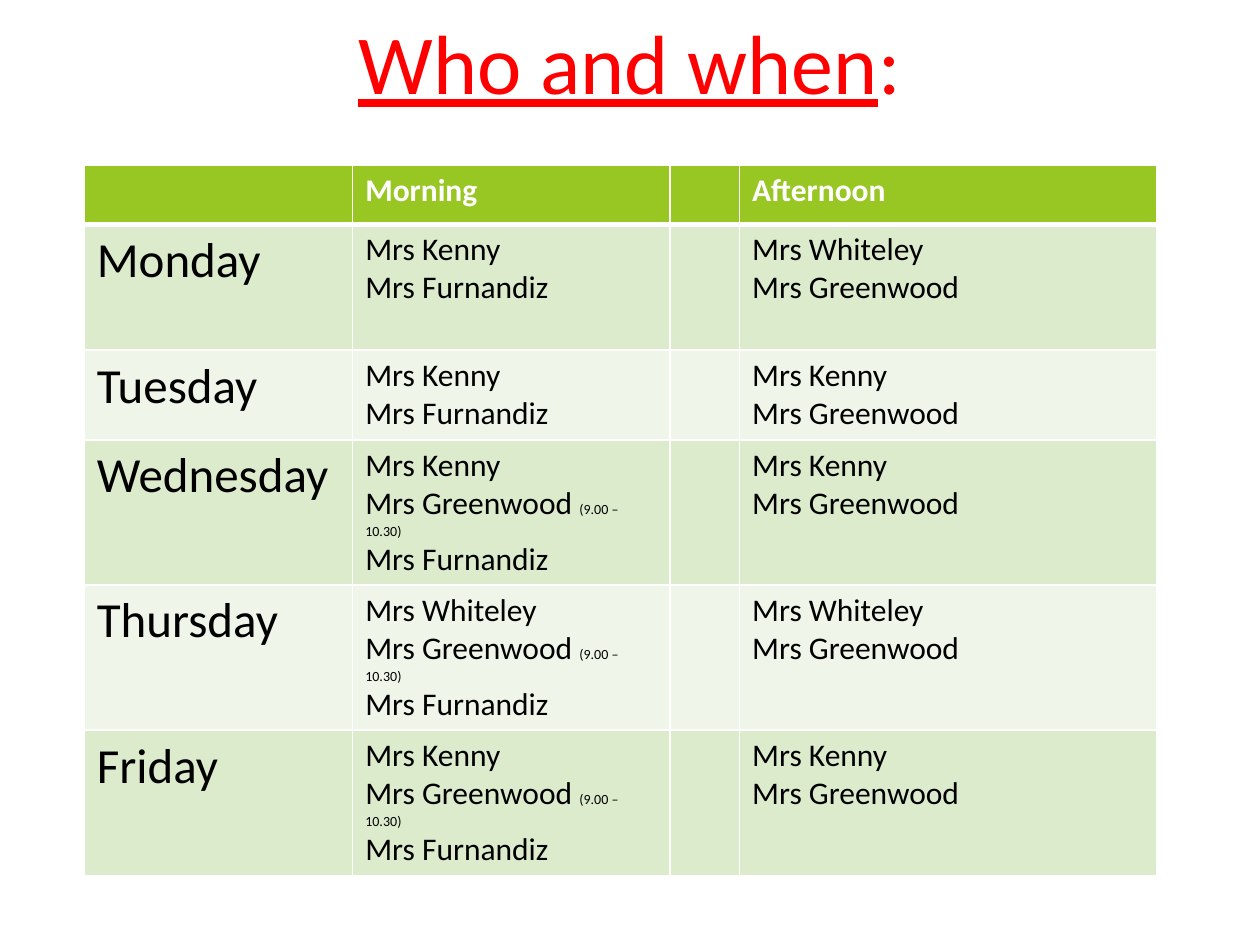
from lxml import etree
from pptx import Presentation
from pptx.dml.color import RGBColor
from pptx.enum import text
from pptx.oxml import ns
from pptx.util import Cm, Pt

WIDTHS = [5.41, 6.4, 1.4, 8.4]
HEIGHTS = [1.19, 2.54, 1.77, 2.88, 2.88, 2.88]
HELP = "Mrs Greenwood"
LATE = "Mrs Greenwood (9.00 – 10.30)"
LAST = "Mrs Furnandiz"
ROWS = [
    ("", ["Morning"], ["Afternoon"]),
    ("Monday", ["Mrs Kenny", LAST], ["Mrs Whiteley", HELP]),
    ("Tuesday", ["Mrs Kenny", LAST], ["Mrs Kenny", HELP]),
    ("Wednesday", ["Mrs Kenny", LATE, LAST], ["Mrs Kenny", HELP]),
    ("Thursday", ["Mrs Whiteley", LATE, LAST], ["Mrs Whiteley", HELP]),
    ("Friday", ["Mrs Kenny", LATE, LAST], ["Mrs Kenny", HELP]),
]


def rgb(code):
    return RGBColor.from_string(code)


def add_run(para, words, size, color, **style):
    run = para.add_run()
    run.text = words
    look = {"name": "Calibri", "size": Pt(size), **style}
    for key, value in look.items():
        setattr(run.font, key, value)
    run.font.color.rgb = rgb(color)


def add_title(slide):
    title = slide.shapes.title
    place = {"left": 0.89, "top": 0.08, "width": 23.6, "height": 2.31}
    for key, value in place.items():
        setattr(title, key, Cm(value))
    frame = title.text_frame
    look = {"word_wrap": True, "auto_size": text.MSO_AUTO_SIZE.NONE,
            "vertical_anchor": text.MSO_ANCHOR.TOP}
    for key, value in look.items():
        setattr(frame, key, value)
    para = frame.paragraphs[0]
    para.alignment = text.PP_ALIGN.CENTER
    add_run(para, "Who and when", 48, "FF0000", underline=True)
    add_run(para, ":", 48, "FF0000", underline=False)


def add_edges(cell, row):
    props = cell._tc.get_or_add_tcPr()
    wide = {"lnT": row == 1, "lnB": row == 0}
    for side in ("lnL", "lnR", "lnT", "lnB"):
        width = Pt(3 if wide.get(side) else 1)
        line = etree.SubElement(props, ns.qn(f"a:{side}"), w=str(width))
        fill = etree.SubElement(line, ns.qn("a:solidFill"))
        etree.SubElement(fill, ns.qn("a:srgbClr"), val="FFFFFF")


def fill_cell(cell, lines, row, size):
    add_edges(cell, row)
    shade = "98C723" if row == 0 else ("EFF5E8", "DDEBCD")[row % 2]
    cell.fill.solid()
    cell.fill.fore_color.rgb = rgb(shade)
    color = "000000" if row else "FFFFFF"
    frame = cell.text_frame
    for n, line in enumerate(lines):
        para = frame.add_paragraph() if n else frame.paragraphs[0]
        name, mark, hours = line.partition("(")
        add_run(para, name, size, color, bold=row == 0)
        if mark:
            add_run(para, mark + hours, 8, color, bold=False)


def add_rota(slide):
    frame = slide.shapes.add_table(
        len(ROWS), len(WIDTHS), Cm(1.7), Cm(3.33),
        Cm(sum(WIDTHS)), Cm(sum(HEIGHTS)))
    table = frame.table
    for col, width in zip(table.columns, WIDTHS):
        col.width = Cm(width)
    for row, height in zip(table.rows, HEIGHTS):
        row.height = Cm(height)
    for r, (day, early, late) in enumerate(ROWS):
        for c, lines in enumerate(([day] if day else [], early, [], late)):
            fill_cell(table.cell(r, c), lines, r, 18 if c else 28)


def main():
    deck = Presentation()
    deck.slide_width, deck.slide_height = Cm(25.4), Cm(19.05)
    slide = deck.slides.add_slide(deck.slide_layouts[5])
    add_title(slide)
    add_rota(slide)
    deck.save("out.pptx")


if __name__ == "__main__":
    main()
